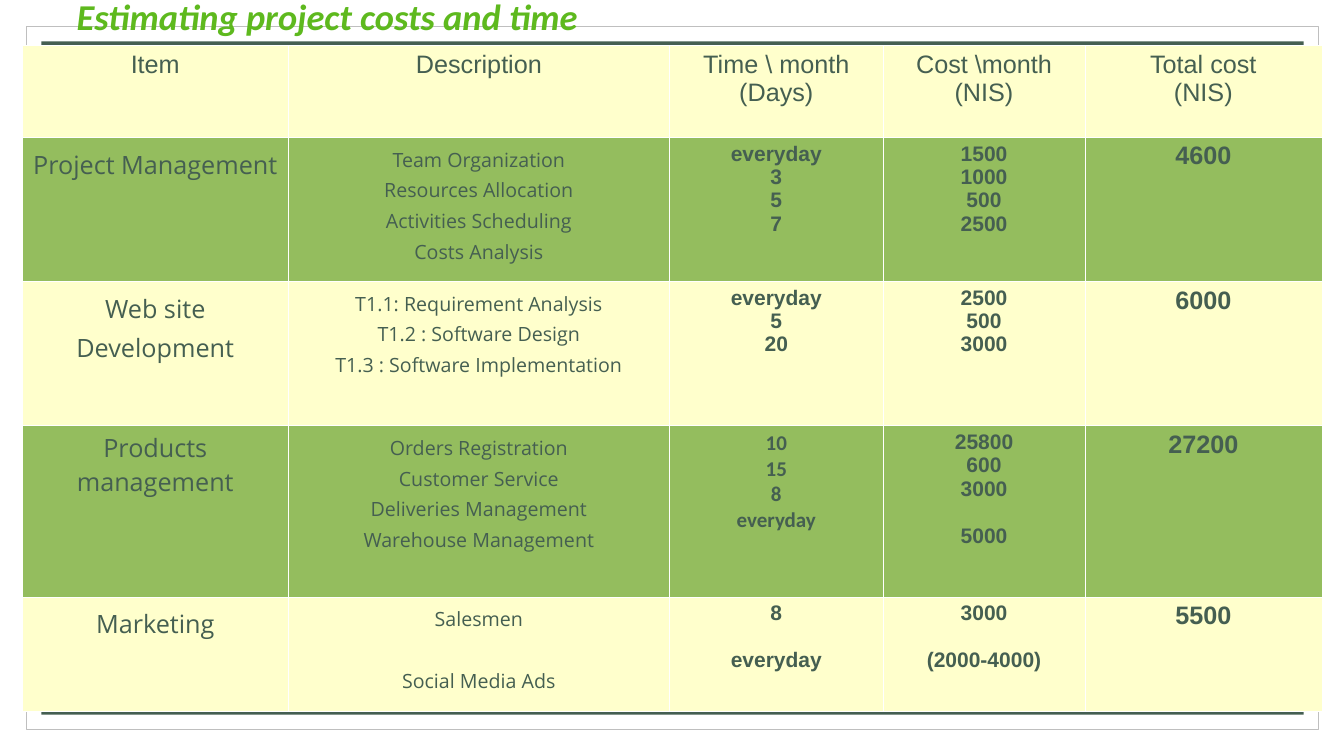
from lxml.etree import SubElement
from pptx import Presentation
from pptx.dml.color import RGBColor
from pptx.enum.shapes import MSO_SHAPE as Shape
from pptx.enum.text import MSO_ANCHOR as Anchor, PP_ALIGN as Align
from pptx.oxml.ns import qn
from pptx.util import Inches, Pt

DARK, WHITE, GREY = "455F51", "FFFFFF", "BFBFBF"
CREAM, GREEN, TITLE_GREEN = "FFFFCC", "94BD5E", "5EB91E"

COLUMN_WIDTHS = [2.64, 3.78, 2.12, 2, 2.35]
ROW_HEIGHTS = [0.91, 1.43, 1.43, 1.7, 1.13]

HEADER_FORMAT = dict(size=18, font="Arial")
NUMBER_FORMAT = dict(size=15, font="Arial", bold=True, gap=17)
COLUMN_FORMATS = [
    dict(size=18, font="Open Sans", spacing=1.15),
    dict(size=14, font="Open Sans", spacing=1.15, gap=22),
    NUMBER_FORMAT,
    NUMBER_FORMAT,
    dict(size=18, font="Arial", bold=True),
]
# Cells that differ from their column, by (row, column)
SPECIAL_FORMATS = {(3, 0): dict(spacing=1.0), (3, 2): dict(font="Calibri")}

# One list of lines per cell; None leaves a gap before the next line
COST_ROWS = [
    [["Item"], ["Description"], ["Time \\ month", "(Days)"],
     ["Cost \\month", "(NIS)"], ["Total cost", "(NIS)"]],
    [["Project Management"],
     ["Team Organization", "Resources Allocation", "Activities Scheduling", "Costs Analysis"],
     ["everyday", "3", "5", "7"], ["1500", "1000", "500", "2500"], ["4600"]],
    [["Web site Development"],
     ["T1.1: Requirement Analysis", "T1.2 : Software Design", "T1.3 : Software Implementation"],
     ["everyday", "5", "20"], ["2500", "500", "3000"], ["6000"]],
    [["Products management"],
     ["Orders Registration", "Customer Service", "Deliveries Management", "Warehouse Management"],
     ["10", "15", "8", "everyday"], ["25800", "600", "3000", None, "5000"], ["27200"]],
    [["Marketing"], ["Salesmen", None, "Social Media Ads"],
     ["8", None, "everyday"], ["3000", None, "(2000-4000)"], ["5500"]],
]


def color(value):
    return RGBColor.from_string(value)


def write_lines(frame, lines, size, font, ink=DARK, bold=False, italic=False,
                align=Align.CENTER, spacing=1.0, gap=0):
    paragraph, space = frame.paragraphs[0], 0
    for index, line in enumerate(lines):
        if line is None:
            space = gap
            continue
        if index:
            paragraph = frame.add_paragraph()
        paragraph.alignment = align
        paragraph.line_spacing = spacing
        paragraph.space_before = Pt(space)
        space = 0
        run = paragraph.add_run()
        run.text = line
        run.font.size, run.font.name = Pt(size), font
        run.font.bold, run.font.italic = bold, italic
        run.font.color.rgb = color(ink)


def add_panel(slide, left, top, width, height, fill, line=None):
    shape = slide.shapes.add_shape(Shape.RECTANGLE, Inches(left), Inches(top),
                                   Inches(width), Inches(height))
    shape.shadow.inherit = False
    shape.fill.solid()
    shape.fill.fore_color.rgb = color(fill)
    if line:
        shape.line.color.rgb = color(line)
        shape.line.width = Pt(0.5)
    else:
        shape.line.fill.background()


def fill_cell(cell, fill):
    # Borders must come before the fill in the cell properties
    properties = cell._tc.get_or_add_tcPr()
    for side in ("a:lnL", "a:lnR", "a:lnT", "a:lnB"):
        border = SubElement(properties, qn(side), w=str(Pt(0.06)))
        solid = SubElement(border, qn("a:solidFill"))
        SubElement(solid, qn("a:srgbClr"), val=WHITE)
    cell.fill.solid()
    cell.fill.fore_color.rgb = color(fill)


def add_cost_table(slide, left, top):
    table = slide.shapes.add_table(
        len(ROW_HEIGHTS), len(COLUMN_WIDTHS), Inches(left), Inches(top),
        Inches(sum(COLUMN_WIDTHS)), Inches(sum(ROW_HEIGHTS))).table
    table.first_row = table.horz_banding = False
    for column, width in zip(table.columns, COLUMN_WIDTHS):
        column.width = Inches(width)
    for row, height in zip(table.rows, ROW_HEIGHTS):
        row.height = Inches(height)
    for row_index, row in enumerate(COST_ROWS):
        for column_index, lines in enumerate(row):
            cell = table.cell(row_index, column_index)
            fill_cell(cell, GREEN if row_index % 2 else CREAM)
            base = COLUMN_FORMATS[column_index] if row_index else HEADER_FORMAT
            special = SPECIAL_FORMATS.get((row_index, column_index), {})
            write_lines(cell.text_frame, lines, **{**base, **special})


def add_title(slide, text, left, top, width, height):
    frame = slide.shapes.add_textbox(Inches(left), Inches(top),
                                     Inches(width), Inches(height)).text_frame
    frame.word_wrap = True
    frame.vertical_anchor = Anchor.MIDDLE
    frame.margin_left = frame.margin_right = frame.margin_top = frame.margin_bottom = 0
    write_lines(frame, [text], size=26, font="Calibri", ink=TITLE_GREEN,
                bold=True, italic=True, align=Align.LEFT)


def main():
    presentation = Presentation()
    presentation.slide_width, presentation.slide_height = Inches(13.33), Inches(7.5)
    slide = presentation.slides.add_slide(presentation.slide_layouts[6])

    # Frame behind the table
    add_panel(slide, 0.26, 0.26, 12.82, 6.98, WHITE, GREY)
    add_panel(slide, 0.41, 0.41, 12.52, 6.68, DARK)

    # Cost table and title
    add_cost_table(slide, 0.22, 0.45)
    add_title(slide, "Estimating project costs and time", 0.76, -0.47, 12, 1.26)

    presentation.save("out.pptx")


if __name__ == "__main__":
    main()
